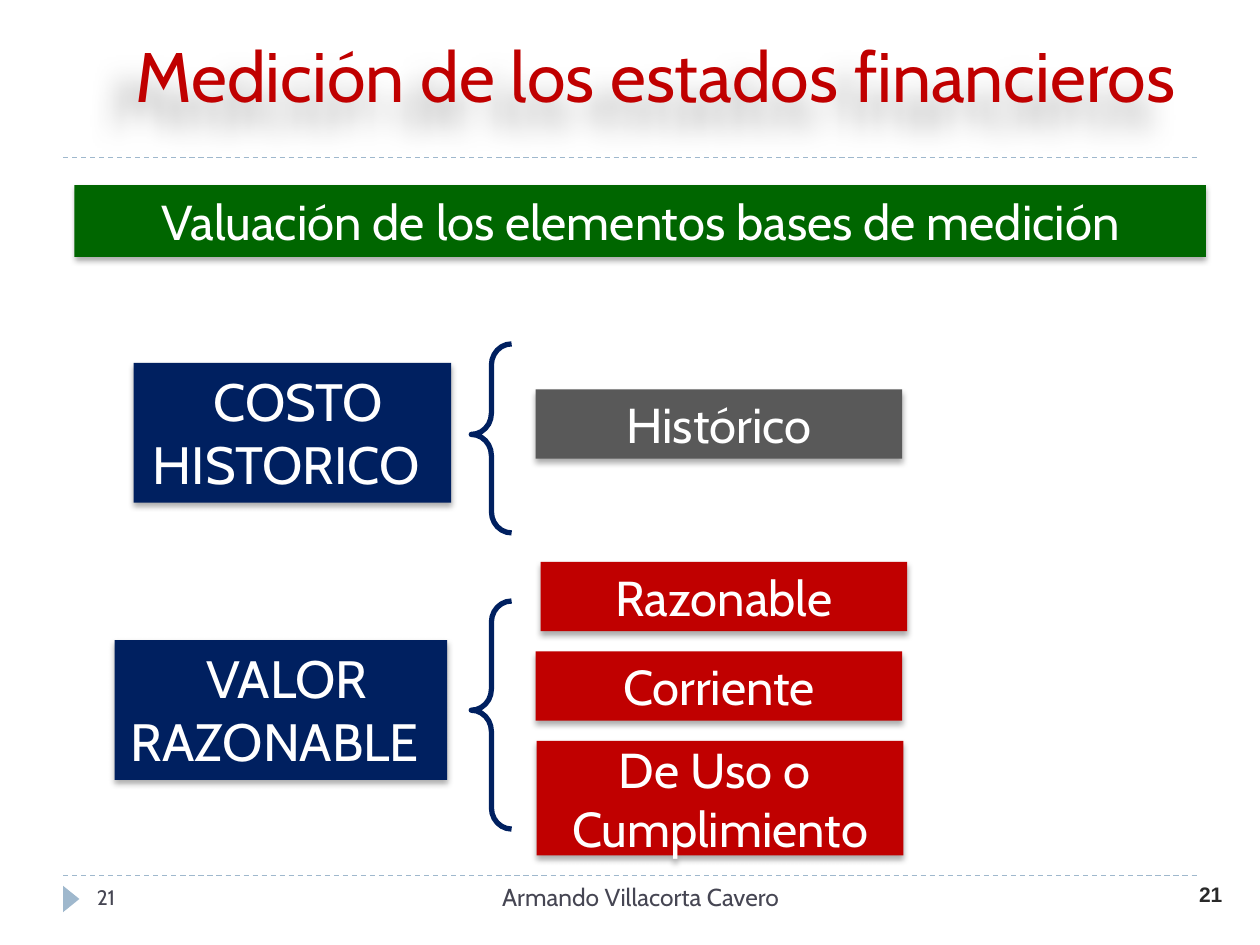
import dataclasses

import lxml.etree
import pptx
import pptx.dml.color
import pptx.enum.dml
import pptx.enum.shapes
import pptx.enum.text
import pptx.oxml.ns
import pptx.util

Inches = pptx.util.Inches
Pt = pptx.util.Pt
qn = pptx.oxml.ns.qn
SHAPE = pptx.enum.shapes.MSO_SHAPE
ALIGN = pptx.enum.text.PP_ALIGN
ANCHOR = pptx.enum.text.MSO_ANCHOR


@dataclasses.dataclass(frozen=True)
class Theme:
    font: str = "Cabin"
    number_font: str = "Arial"
    white: str = "FFFFFF"
    green: str = "006600"
    gray: str = "595959"
    red: str = "C00000"
    navy: str = "002060"
    rule: str = "9FB8CD"
    footer: str = "464653"
    number: str = "292929"
    title_size: int = 40
    group_size: int = 30
    box_size: int = 28
    footer_size: int = 14
    number_size: int = 12


THEME = Theme()


def rgb(color):
    return pptx.dml.color.RGBColor.from_string(color)


def write(shape, lines, size, color, align=ALIGN.CENTER, anchor=ANCHOR.TOP,
          wrap=True, font=THEME.font, bold=False):
    tf = shape.text_frame
    tf.word_wrap = wrap
    tf.vertical_anchor = anchor
    for i, line in enumerate(lines):
        p = tf.paragraphs[0] if i == 0 else tf.add_paragraph()
        p.add_run().text = line
        p.alignment = align
        p.font.name = font
        p.font.size = Pt(size)
        p.font.bold = bold
        p.font.color.rgb = rgb(color)


def add_shadow(sp, blur, distance, angle, opacity):
    effects = sp._element.spPr.find(qn("a:effectLst"))
    shadow = lxml.etree.SubElement(
        effects, qn("a:outerShdw"), blurRad=str(Pt(blur)), dist=str(Pt(distance)),
        dir=str(angle * 60000), algn="ctr", rotWithShape="0")
    color = lxml.etree.SubElement(shadow, qn("a:srgbClr"), val="000000")
    lxml.etree.SubElement(color, qn("a:alpha"), val=str(opacity * 1000))


def add_plain(s, kind, x, y, w, h, fill=None):
    sp = s.shapes.add_shape(kind, Inches(x), Inches(y), Inches(w), Inches(h))
    if fill:
        sp.fill.solid()
        sp.fill.fore_color.rgb = rgb(fill)
    else:
        sp.fill.background()
    sp.line.fill.background()
    sp.shadow.inherit = False
    return sp


def add_box(s, x, y, w, h, fill, lines, size=THEME.box_size,
            anchor=ANCHOR.TOP, wrap=True):
    sp = add_plain(s, SHAPE.RECTANGLE, x, y, w, h, fill)
    add_shadow(sp, 3.5, 2.2, 90, 32)
    write(sp, lines, size, THEME.white, anchor=anchor, wrap=wrap)


def add_brace(s, y, h):
    sp = add_plain(s, SHAPE.LEFT_BRACE, 3.74, y, 0.32, h)
    sp.adjustments[0] = 0.525
    sp.adjustments[1] = 0.479
    sp.line.color.rgb = rgb(THEME.navy)
    sp.line.width = Pt(3)


def add_rule(s, y):
    line = s.shapes.add_connector(pptx.enum.shapes.MSO_CONNECTOR.STRAIGHT,
                                  Inches(0.5), Inches(y), Inches(9.5), Inches(y))
    line.line.color.rgb = rgb(THEME.rule)
    line.line.width = Pt(0.75)
    line.line.dash_style = pptx.enum.dml.MSO_LINE.DASH
    lxml.etree.SubElement(line._element.spPr, qn("a:effectLst"))


def add_title(s, text):
    sp = add_plain(s, SHAPE.ROUND_2_DIAG_RECTANGLE, 0.75, 0.21, 8.9, 0.87)
    sp.adjustments[0] = 0
    sp.adjustments[1] = 0
    add_shadow(sp, 15, 20, 135, 30)
    write(sp, [text], THEME.title_size, THEME.red)


def add_label(s, x, y, w, text, size, color, align, **style):
    tb = s.shapes.add_textbox(Inches(x), Inches(y), Inches(w), Inches(0.4))
    write(tb, [text], size, color, align, **style)


def main():
    prs = pptx.Presentation()
    prs.slide_width = Inches(10)
    prs.slide_height = Inches(7.5)
    s = prs.slides.add_slide(prs.slide_layouts[6])

    for y in (6.95, 1.25):
        add_rule(s, y)
    marker = add_plain(s, SHAPE.ISOSCELES_TRIANGLE, 0.46, 7.07, 0.21, 0.13, THEME.rule)
    marker.rotation = 90

    add_box(s, 0.59, 1.47, 8.98, 0.57, THEME.green,
            ["Valuación de los elementos bases de medición"])
    for x, y, h, fill, lines in (
        (4.25, 3.09, 0.55, THEME.gray, ["Histórico"]),
        (4.25, 5.17, 0.55, THEME.red, ["Corriente"]),
        (4.29, 4.46, 0.55, THEME.red, ["Razonable"]),
        (4.26, 5.88, 0.91, THEME.red, ["De Uso o ", "Cumplimiento"]),
    ):
        add_box(s, x, y, 2.91, h, fill, lines, anchor=ANCHOR.MIDDLE, wrap=False)
    for x, y, w, lines in (
        (1.06, 2.88, 2.52, [" COSTO", "HISTORICO "]),
        (0.91, 5.08, 2.64, [" VALOR RAZONABLE "]),
    ):
        add_box(s, x, y, w, 1.11, THEME.navy, lines, THEME.group_size)

    add_title(s, "Medición de los estados financieros")
    for y, h in ((2.73, 1.5), (4.77, 1.81)):
        add_brace(s, y, h)

    add_label(s, 7.47, 6.95, 2.33, "21", THEME.number_size, THEME.number,
              ALIGN.RIGHT, font=THEME.number_font, bold=True)
    add_label(s, 3.17, 6.95, 3.83, "Armando Villacorta Cavero", THEME.footer_size,
              THEME.footer, ALIGN.CENTER)
    add_label(s, 0.67, 6.97, 2.17, "21", THEME.number_size, THEME.footer, ALIGN.LEFT)

    prs.save("out.pptx")


if __name__ == "__main__":
    main()
